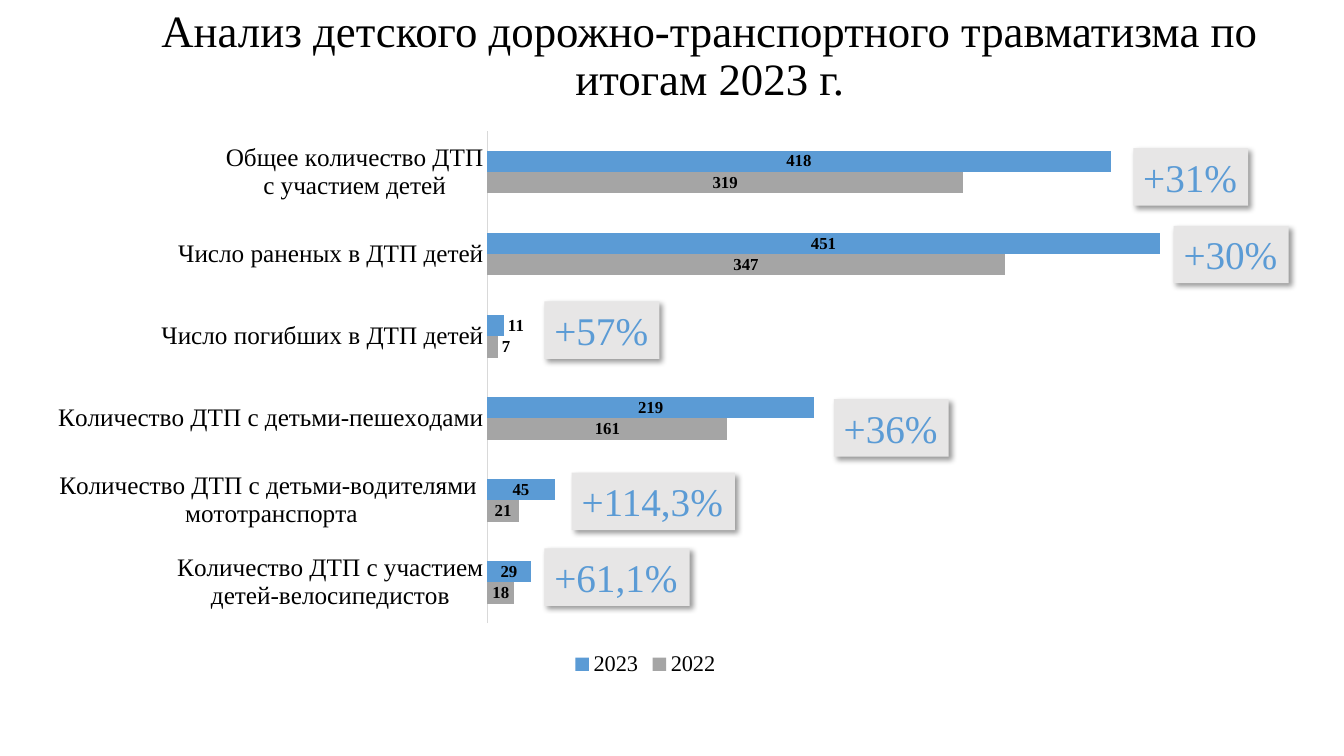
from lxml import etree
from pptx import Presentation
from pptx import util as u
from pptx.chart.data import CategoryChartData
from pptx.dml.color import RGBColor
from pptx.enum import chart as ch, shapes, text
from pptx.oxml import parse_xml
from pptx.oxml.ns import nsdecls, qn

FONT = "Times New Roman"
COLORS = {"text": "000000", "2022": "A5A5A5", "2023": "5B9BD5",
          "badge": "E7E6E6", "axis": "D9D9D9"}
HEADING = "Анализ детского дорожно-транспортного травматизма по итогам 2023 г."
YEARS = ("2022", "2023")
# category, value for each year; bottom bar first
ACCIDENTS = [
    ("Количество ДТП с участием\nдетей-велосипедистов", 18, 29),
    ("Количество ДТП с детьми-водителями \nмототранспорта", 21, 45),
    ("Количество ДТП с детьми-пешеходами", 161, 219),
    ("Число погибших в ДТП детей", 7, 11),
    ("Число раненых в ДТП детей", 347, 451),
    ("Общее количество ДТП\nс участием детей", 319, 418),
]
SHORT_BARS = 3  # category whose labels do not fit inside the bars
# growth, left, top, width
GROWTH = [
    ("+31%", 11.24, 1.47, 1.14),
    ("+30%", 11.64, 2.24, 1.14),
    ("+57%", 5.4, 2.99, 1.14),
    ("+36%", 8.27, 3.96, 1.14),
    ("+114,3%", 5.67, 4.69, 1.62),
    ("+61,1%", 5.4, 5.44, 1.44),
]
BADGE_HEIGHT = 0.57
CHART_BOX = (0.38, 1.16, 12.04, 5.6)
HEADING_BOX = (1.29, -0.16, 11.5, 1.45)
PLOT_SHARES = {"x": 0.37, "y": 0.025, "w": 0.614, "h": 0.872}


def inches(box):
    return [u.Inches(length) for length in box]


def color(name):
    return RGBColor.from_string(COLORS[name])


def style(font, size, name="text", bold=False):
    font.name, font.size, font.bold = FONT, u.Pt(size), bold
    font.color.rgb = color(name)


def place_plot(chart):
    """Fix the inner plot area at its shares of the chart."""
    area = chart.element.find(".//" + qn("c:plotArea"))
    for old in area.findall(qn("c:layout")):
        area.remove(old)
    layout = parse_xml(f"<c:layout {nsdecls('c')}><c:manualLayout/></c:layout>")
    settings = {"layoutTarget": "inner", "xMode": "edge", "yMode": "edge", **PLOT_SHARES}
    for tag, value in settings.items():
        etree.SubElement(layout[0], qn(f"c:{tag}")).set("val", str(value))
    area.insert(0, layout)


def add_accident_chart(slide):
    data = CategoryChartData()
    data.categories = [row[0] for row in ACCIDENTS]
    for column, year in enumerate(YEARS, 1):
        data.add_series(year, [row[column] for row in ACCIDENTS])
    chart = slide.shapes.add_chart(
        ch.XL_CHART_TYPE.BAR_CLUSTERED, *inches(CHART_BOX), data).chart
    style(chart.font, 12)
    chart.has_title = False
    place_plot(chart)

    chart.has_legend = True
    chart.legend.position = ch.XL_LEGEND_POSITION.BOTTOM
    chart.legend.include_in_layout = False
    style(chart.legend.font, 16)

    categories, values = chart.category_axis, chart.value_axis
    categories.major_tick_mark = ch.XL_TICK_MARK.NONE
    categories.format.line.color.rgb = color("axis")
    categories.format.line.width = u.Pt(0.75)
    style(categories.tick_labels.font, 18)
    values.minimum_scale, values.maximum_scale = 0, 500
    values.has_major_gridlines = False
    values.visible = False

    plot = chart.plots[0]
    plot.gap_width = 182
    plot.vary_by_categories = False
    for series in plot.series:
        series.format.fill.solid()
        series.format.fill.fore_color.rgb = color(series.name)
        labels = series.data_labels
        labels.show_value = True
        labels.position = ch.XL_LABEL_POSITION.CENTER
        style(labels.font, 12, bold=True)
        outside = series.points[SHORT_BARS].data_label
        style(outside.font, 12, bold=True)
        outside.position = ch.XL_LABEL_POSITION.OUTSIDE_END


def add_heading(slide):
    title = slide.shapes.title
    title.left, title.top, title.width, title.height = inches(HEADING_BOX)
    frame = title.text_frame
    frame.text = HEADING
    frame.word_wrap = True
    frame.vertical_anchor = text.MSO_ANCHOR.MIDDLE
    paragraph = frame.paragraphs[0]
    paragraph.alignment = text.PP_ALIGN.CENTER
    paragraph.line_spacing = 0.9
    style(paragraph.runs[0].font, 32)


def add_badge(slide, growth, left, top, width):
    badge = slide.shapes.add_shape(
        shapes.MSO_SHAPE.RECTANGLE, *inches((left, top, width, BADGE_HEIGHT)))
    badge.fill.solid()
    badge.fill.fore_color.rgb = color("badge")
    badge.line.fill.background()
    badge.shadow.inherit = False
    effects = badge.element.spPr.find(qn("a:effectLst"))
    effects.append(parse_xml(
        f'<a:outerShdw {nsdecls("a")} blurRad="{u.Pt(4)}" dist="{u.Pt(3)}" '
        f'dir="2700000" algn="tl" rotWithShape="0"><a:srgbClr val="{COLORS["text"]}">'
        '<a:alpha val="40000"/></a:srgbClr></a:outerShdw>'))
    frame = badge.text_frame
    frame.text = growth
    frame.word_wrap = False
    frame.auto_size = text.MSO_AUTO_SIZE.SHAPE_TO_FIT_TEXT
    frame.vertical_anchor = text.MSO_ANCHOR.TOP
    frame.paragraphs[0].alignment = text.PP_ALIGN.LEFT
    style(frame.paragraphs[0].runs[0].font, 28, "2023")


def main():
    deck = Presentation()
    deck.slide_width, deck.slide_height = inches((13.33, 7.5))
    slide = deck.slides.add_slide(deck.slide_layouts.get_by_name("Title Only"))
    add_accident_chart(slide)
    add_heading(slide)
    for badge in GROWTH:
        add_badge(slide, *badge)
    deck.save("out.pptx")


if __name__ == "__main__":
    main()
